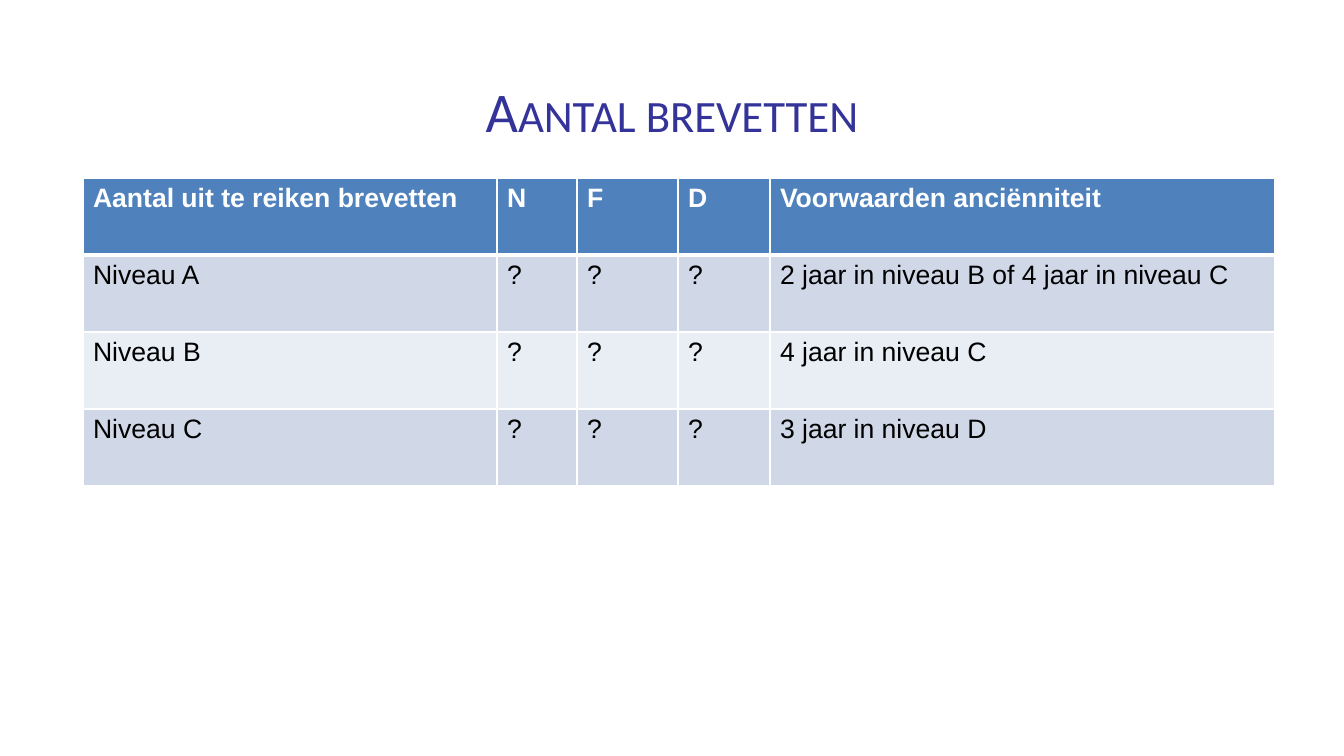
from lxml import etree
from pptx import Presentation
from pptx import util as u
from pptx.dml.color import RGBColor
from pptx.enum import text
from pptx.oxml.ns import qn

EMU_PER_PX = 914400 / 100.8
COLORS = {
    "title": "333399",
    "header": "4F81BD",
    "odd_row": "D0D8E8",
    "even_row": "E9EDF4",
    "white": "FFFFFF",
    "black": "000000",
}
COLUMN_WIDTHS = [414, 80, 101, 92, 505]
ROWS = [
    ["Aantal uit te reiken brevetten", "N", "F", "D", "Voorwaarden anciënniteit"],
    ["Niveau A", "?", "?", "?", "2 jaar in niveau B of 4 jaar in niveau C"],
    ["Niveau B", "?", "?", "?", "4 jaar in niveau C"],
    ["Niveau C", "?", "?", "?", "3 jaar in niveau D"],
]


def px(length):
    return u.Emu(round(length * EMU_PER_PX))


def color(name):
    return RGBColor.from_string(COLORS[name])


def style_font(paragraph, name, size, color_name, bold=False):
    font = paragraph.font
    font.name, font.size, font.bold = name, u.Pt(size), bold
    font.color.rgb = color(color_name)


def add_title(slide, left, top, width, height):
    box = slide.shapes.add_textbox(px(left), px(top), px(width), px(height))
    frame = box.text_frame
    frame.word_wrap = True
    frame.vertical_anchor = text.MSO_ANCHOR.MIDDLE
    paragraph = frame.paragraphs[0]
    paragraph.alignment = text.PP_ALIGN.CENTER
    paragraph.line_spacing = 1.5
    run = paragraph.add_run()
    run.text = "Aantal brevetten"
    style_font(paragraph, "Calibri", 40, "title")
    run.font._element.set("cap", "small")


def add_borders(cell, widths):
    """Draw white cell borders; widths maps each side to points."""
    properties = cell._tc.get_or_add_tcPr()
    for side, width in widths.items():
        line = etree.SubElement(properties, qn(f"a:ln{side}"), w=str(u.Pt(width)))
        fill = etree.SubElement(line, qn("a:solidFill"))
        etree.SubElement(fill, qn("a:srgbClr"), val=COLORS["white"])


def style_cell(cell, row_index):
    is_header = row_index == 0
    add_borders(cell, {
        "L": 1,
        "R": 1,
        "T": 3 if row_index == 1 else 1,
        "B": 3 if is_header else 1,
    })
    band = "odd_row" if row_index % 2 else "even_row"
    cell.fill.solid()
    cell.fill.fore_color.rgb = color("header" if is_header else band)
    style_font(cell.text_frame.paragraphs[0], "Arial", 19,
               "white" if is_header else "black", is_header)


def add_certificate_table(slide, left, top, row_height):
    table = slide.shapes.add_table(
        len(ROWS), len(COLUMN_WIDTHS), px(left), px(top),
        px(sum(COLUMN_WIDTHS)), px(row_height * len(ROWS))).table
    for column, width in zip(table.columns, COLUMN_WIDTHS):
        column.width = px(width)
    for row_index, labels in enumerate(ROWS):
        table.rows[row_index].height = px(row_height)
        for column_index, label in enumerate(labels):
            cell = table.cell(row_index, column_index)
            cell.text = label
            style_cell(cell, row_index)


def main():
    presentation = Presentation()
    presentation.slide_width = px(1344)
    presentation.slide_height = px(756)
    slide = presentation.slides.add_slide(presentation.slide_layouts[6])

    # Title
    add_title(slide, 67, 30, 1210, 126)

    # Table of certificates per level
    add_certificate_table(slide, 83, 178, 77)

    presentation.save("out.pptx")


if __name__ == "__main__":
    main()
